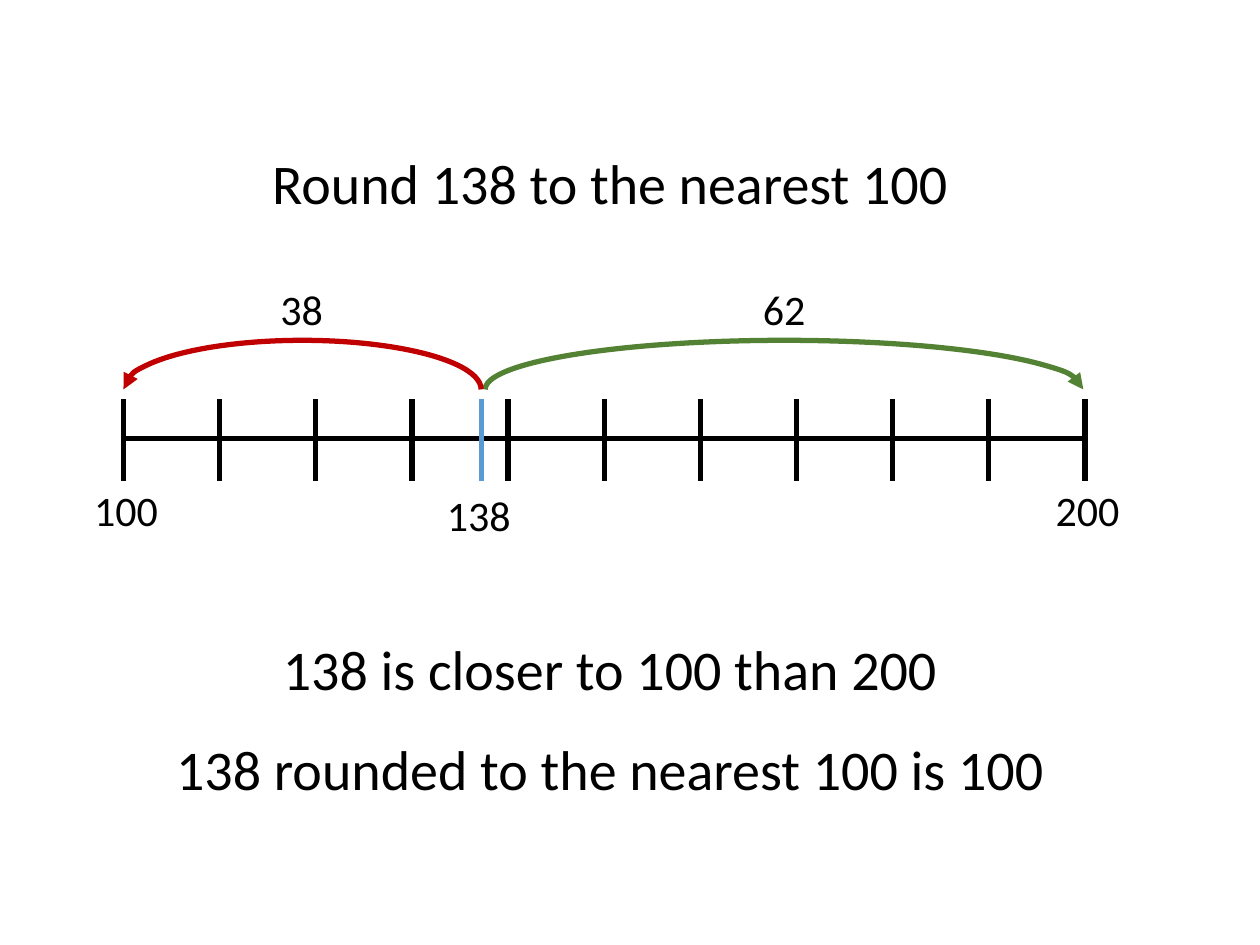
from pptx import Presentation
from pptx import util as u
from pptx.dml import color
from pptx.enum import shapes, text
from pptx.oxml import ns
from lxml import etree

COLORS = {"ink": "000000", "marker": "5B9BD5", "down": "C00000", "up": "548235"}
AXIS_LEFT, AXIS_RIGHT, AXIS_Y = 2.49, 21.87, 8.84
TICK_TOP, TICK_BOTTOM = 8.05, 9.7
INTERVALS = 10
MARKER_X = 9.7
ARC_TOP, ARC_RISE = 6.86, 0.99
TEXT_LEFT, TEXT_WIDTH, TEXT_HEIGHT = 1.85, 20.9, 1.63
LABEL_WIDTH, LABEL_HEIGHT = 2.26, 1.27


class NumberLineSlide:
    font_name = "Calibri"
    statement_size = 32
    label_size = 24
    line_width = 3

    def __init__(self, presentation):
        self.slide = presentation.slides.add_slide(presentation.slide_layouts[5])

    def color(self, name):
        return color.RGBColor.from_string(COLORS[name])

    def set_text(self, shape, words, size, align):
        frame = shape.text_frame
        frame.text = words
        frame.word_wrap = True
        frame.auto_size = text.MSO_AUTO_SIZE.SHAPE_TO_FIT_TEXT
        frame.vertical_anchor = text.MSO_ANCHOR.TOP
        paragraph = frame.paragraphs[0]
        paragraph.alignment = align
        paragraph.font.name = self.font_name
        paragraph.font.size = u.Pt(size)
        paragraph.font.color.rgb = self.color("ink")

    def title(self, words, top):
        shape = self.slide.shapes.title
        shape.left, shape.top = u.Cm(TEXT_LEFT), u.Cm(top)
        shape.width, shape.height = u.Cm(TEXT_WIDTH), u.Cm(TEXT_HEIGHT)
        self.set_text(shape, words, self.statement_size, text.PP_ALIGN.CENTER)

    def statement(self, words, top):
        shape = self.slide.shapes.add_textbox(
            u.Cm(TEXT_LEFT), u.Cm(top), u.Cm(TEXT_WIDTH), u.Cm(TEXT_HEIGHT))
        self.set_text(shape, words, self.statement_size, text.PP_ALIGN.CENTER)

    def label(self, words, left, top, align=text.PP_ALIGN.LEFT):
        shape = self.slide.shapes.add_textbox(
            u.Cm(left), u.Cm(top), u.Cm(LABEL_WIDTH), u.Cm(LABEL_HEIGHT))
        self.set_text(shape, words, self.label_size, align)

    def line(self, start, end, color_name="ink"):
        connector = self.slide.shapes.add_connector(
            shapes.MSO_CONNECTOR.STRAIGHT, *map(u.Cm, start + end))
        connector.line.color.rgb = self.color(color_name)
        connector.line.width = u.Pt(self.line_width)
        etree.SubElement(connector._element.spPr, ns.qn("a:effectLst"))

    def tick(self, x, color_name="ink"):
        self.line((x, TICK_TOP), (x, TICK_BOTTOM), color_name)

    def arc(self, left, right, color_name, arrow_end):
        length = right - left
        center_x, center_y = (left + right) / 2, ARC_TOP + ARC_RISE / 2
        shape = self.slide.shapes.add_shape(
            shapes.MSO_SHAPE.RIGHT_BRACKET,
            u.Cm(center_x - ARC_RISE / 2), u.Cm(center_y - length / 2),
            u.Cm(ARC_RISE), u.Cm(length))
        shape.rotation = 270
        shape.adjustments[0] = length / 2 / ARC_RISE
        shape.shadow.inherit = False
        shape.fill.background()
        shape.line.color.rgb = self.color(color_name)
        shape.line.width = u.Pt(self.line_width)
        outline = shape._element.spPr.find(ns.qn("a:ln"))
        etree.SubElement(outline, ns.qn(arrow_end), type="triangle")


def main():
    presentation = Presentation()
    presentation.slide_width, presentation.slide_height = u.Cm(25.4), u.Cm(19.05)
    page = NumberLineSlide(presentation)

    page.title("Round 138 to the nearest 100", 2.87)

    page.line((AXIS_LEFT, AXIS_Y), (AXIS_RIGHT, AXIS_Y))
    step = (AXIS_RIGHT - AXIS_LEFT) / INTERVALS
    for index in range(INTERVALS + 1):
        page.tick(AXIS_LEFT + index * step)
    page.tick(MARKER_X, "marker")

    page.label("100", 1.65, 9.65)
    page.label("200", 21.03, 9.65)
    page.label("138", 8.76, 9.75)
    page.label("38", 4.95, 5.59, text.PP_ALIGN.CENTER)
    page.label("62", 14.68, 5.59, text.PP_ALIGN.CENTER)

    page.statement("138 is closer to 100 than 200", 12.67)
    page.statement("138 rounded to the nearest 100 is 100", 14.68)

    page.arc(MARKER_X + 0.08, AXIS_RIGHT - 0.03, "up", "a:tailEnd")
    page.arc(AXIS_LEFT, MARKER_X, "down", "a:headEnd")

    presentation.save("out.pptx")


if __name__ == "__main__":
    main()
